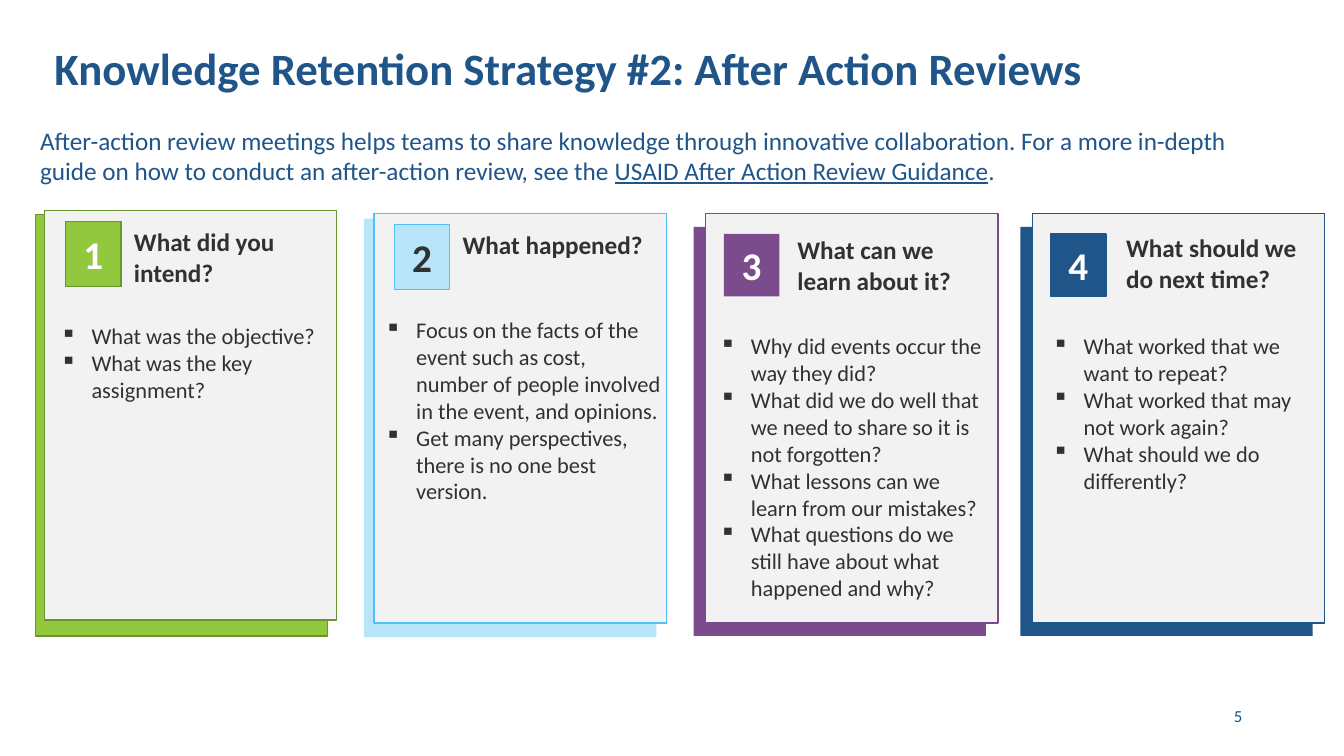
from lxml.etree import SubElement
from pptx import Presentation
from pptx.dml.color import RGBColor
from pptx.enum.shapes import MSO_SHAPE
from pptx.enum.text import MSO_ANCHOR as ANCHOR, PP_ALIGN as ALIGN
from pptx.oxml.ns import qn
from pptx.util import Inches, Pt

COLORS = {
    "navy": "20558A", "page": "005A96", "ink": "303132", "white": "FFFFFF",
    "panel": "F2F2F2", "green": "92C83E", "dark_green": "6C942E",
    "pale_blue": "B9E5FB", "sky": "52BFF5", "purple": "7B4C8C",
}
PANEL_WIDTH, PANEL_HEIGHT = 2.9, 4.06
BADGE_WIDTH = 0.55
BULLET_INDENT = Inches(0.31)


def rgb(name):
    return RGBColor.from_string(COLORS[name])


def write(shapes, box, paragraphs, size=16, color="ink", bold=False, align=ALIGN.LEFT,
          anchor=ANCHOR.TOP, bullet=None, spacing=None, fill=None, line=None):
    """Add a text box, or a rectangle when fill is given; a paragraph is a list of (text, underline)."""
    place = [Inches(length) for length in box]
    if fill:
        shape = shapes.add_shape(MSO_SHAPE.RECTANGLE, *place)
        shape.shadow.inherit = False
        shape.fill.solid()
        shape.fill.fore_color.rgb = rgb(fill)
        if line:
            shape.line.color.rgb = rgb(line)
            shape.line.width = Pt(1)
        else:
            shape.line.fill.background()
    else:
        shape = shapes.add_textbox(*place)
    frame = shape.text_frame
    frame.word_wrap = True
    frame.vertical_anchor = anchor
    for index, runs in enumerate(paragraphs):
        paragraph = frame.paragraphs[0] if index == 0 else frame.add_paragraph()
        paragraph.alignment = align
        if spacing:
            paragraph.line_spacing = spacing
        if bullet:
            properties = paragraph._p.get_or_add_pPr()
            properties.set("marL", str(BULLET_INDENT))
            properties.set("indent", str(-BULLET_INDENT))
            SubElement(properties, qn("a:buChar")).set("char", bullet)
        for text, underline in runs:
            run = paragraph.add_run()
            run.text = text
            run.font.name = "Calibri"
            run.font.size = Pt(size)
            run.font.bold = bold
            run.font.underline = underline
            run.font.color.rgb = rgb(color)


cards = [
    dict(panel=(0.44, 2.09), back=(0.35, 2.13, 4.18), badge=(0.65, 2.2, 0.64),
         color="green", back_line="dark_green", panel_line="dark_green",
         badge_line="dark_green", number_color="white",
         heading="What did you intend?", heading_box=(1.23, 2.2, 2.02, 0.71),
         points_box=(0.5, 3.15, 2.93, 0.82),
         points=["What was the objective?", "What was the key assignment?"]),
    dict(panel=(3.71, 2.12), back=(3.61, 2.17, 4.15), badge=(3.91, 2.23, 0.64),
         color="pale_blue", back_line=None, panel_line="sky",
         badge_line="sky", number_color="ink",
         heading="What happened?", heading_box=(4.49, 2.23, 2.51, 0.36),
         points_box=(3.72, 3.09, 2.94, 2.03),
         points=["Focus on the facts of the event such as cost, number of people "
                 "involved in the event, and opinions.",
                 "Get many perspectives, there is no one best version."]),
    dict(panel=(7, 2.12), back=(6.88, 2.25, 4.06), badge=(7.18, 2.32, 0.62),
         color="purple", back_line=None, panel_line="purple",
         badge_line=None, number_color="white",
         heading="What can we learn about it?", heading_box=(7.81, 2.28, 1.99, 0.69),
         points_box=(7.04, 3.25, 2.83, 2.46),
         points=["Why did events occur the way they did?",
                 "What did we do well that we need to share so it is not forgotten?",
                 "What lessons can we learn from our mistakes?",
                 "What questions do we still have about what happened and why?"]),
    dict(panel=(10.24, 2.12), back=(10.12, 2.25, 4.06), badge=(10.42, 2.32, 0.62),
         color="navy", back_line=None, panel_line="navy",
         badge_line="navy", number_color="white",
         heading="What should we do next time?", heading_box=(11.07, 2.26, 1.98, 0.69),
         points_box=(10.34, 3.25, 2.81, 1.51),
         points=["What worked that we want to repeat?",
                 "What worked that may not work again?",
                 "What should we do differently?"]),
]

deck = Presentation()
deck.slide_width, deck.slide_height = Inches(13.33), Inches(7.5)
slide = deck.slides.add_slide(deck.slide_layouts[6])

write(slide.shapes, (0.44, -0.28, 12.46, 1.27),
      [[("Knowledge Retention Strategy #2: After Action Reviews", False)]],
      size=32, color="navy", bold=True, anchor=ANCHOR.BOTTOM, spacing=0.9)
write(slide.shapes, (9.42, 6.95, 3, 0.4), [[("5", False)]],
      size=12, color="page", align=ALIGN.RIGHT)

for number, card in enumerate(cards, start=1):
    group = slide.shapes.add_group_shape().shapes
    back_left, back_top, back_height = card["back"]
    badge_left, badge_top, badge_height = card["badge"]
    write(group, (back_left, back_top, PANEL_WIDTH, back_height), [],
          fill=card["color"], line=card["back_line"])
    write(group, (*card["panel"], PANEL_WIDTH, PANEL_HEIGHT), [],
          fill="panel", line=card["panel_line"])
    write(group, (badge_left, badge_top, BADGE_WIDTH, badge_height),
          [[(str(number), False)]], size=28, color=card["number_color"], bold=True,
          align=ALIGN.CENTER, anchor=ANCHOR.MIDDLE,
          fill=card["color"], line=card["badge_line"])
    write(group, card["heading_box"], [[(card["heading"], False)]], size=18, bold=True)
    write(group, card["points_box"], [[(point, False)] for point in card["points"]],
          bullet="▪")

write(slide.shapes, (0.3, 1.19, 12.46, 0.71),
      [[("After-action review meetings helps teams to share knowledge through innovative "
         "collaboration. For a more in-depth guide on how to conduct an after-action "
         "review, see the ", False),
        ("USAID After Action Review Guidance", True), (".", False)]],
      size=18, color="navy")

deck.save("out.pptx")
